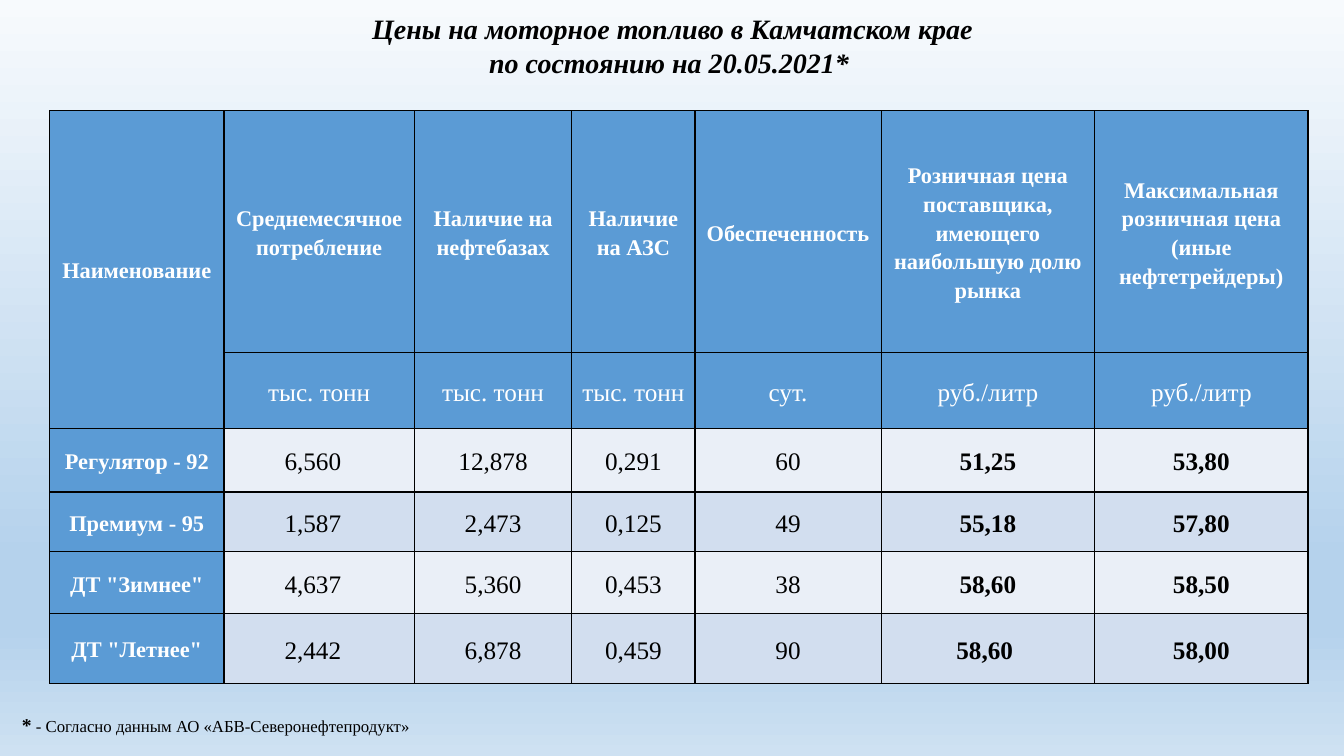
from dataclasses import dataclass

import lxml.etree
import pptx
import pptx.dml.color
import pptx.enum.text
import pptx.oxml.ns
import pptx.util

Pt = pptx.util.Pt
qn = pptx.oxml.ns.qn
ALIGN = pptx.enum.text.PP_ALIGN
ANCHOR = pptx.enum.text.MSO_ANCHOR

FONT = "Times New Roman"
COLORS = {
    "header": "5B9BD5",
    "light": "EAEFF7",
    "band": "D2DEEF",
    "white": "FFFFFF",
    "black": "000000",
}
SKY_STOPS = {0: "F7FAFD", 74: "B5D2EC", 83: "B5D2EC", 100: "CEE1F2"}


@dataclass(frozen=True)
class Run:
    text: str
    size: float
    color: str = "black"
    bold: bool = False
    italic: bool = False


@dataclass(frozen=True)
class Caption:
    left: float
    top: float
    width: float
    height: float
    align: ALIGN
    lines: tuple[tuple[Run, ...], ...]


@dataclass(frozen=True)
class Indicator:
    title: str
    unit: str
    width: float
    bold: bool = False
    right_indent: float = 0


@dataclass(frozen=True)
class Fuel:
    name: str
    height: float
    values: tuple[str, ...]


NAME_WIDTH = 124.5
TITLE_HEIGHT, UNIT_HEIGHT = 173, 54
TABLE_LEFT, TABLE_TOP = 35.5, 79
CELL_INSET = 5

INDICATORS = (
    Indicator("Среднемесячное потребление", "тыс. тонн", 136, right_indent=9),
    Indicator("Наличие на нефтебазах", "тыс. тонн", 112.5),
    Indicator("Наличие на АЗС", "тыс. тонн", 88),
    Indicator("Обеспеченность", "сут.", 133),
    Indicator("Розничная цена поставщика, имеющего наибольшую долю рынка",
              "руб./литр", 152.5, bold=True),
    Indicator("Максимальная розничная цена\n(иные нефтетрейдеры)",
              "руб./литр", 152.5, bold=True),
)
FUELS = (
    Fuel("Регулятор - 92", 45.5, ("6,560", "12,878", "0,291", "60", "51,25", "53,80")),
    Fuel("Премиум - 95", 42.5, ("1,587", "2,473", "0,125", "49", "55,18", "57,80")),
    Fuel('ДТ "Зимнее"', 44.5, ("4,637", "5,360", "0,453", "38", "58,60", "58,50")),
    Fuel('ДТ "Летнее"', 49.5, ("2,442", "6,878", "0,459", "90", "58,60 ", "58,00")),
)
CAPTIONS = (
    Caption(95, 5, 771, 55.5, ALIGN.CENTER, (
        (Run("Цены на моторное топливо в Камчатском крае", 20, bold=True, italic=True),),
        (Run("по состоянию на 20.05.2021* ", 20, bold=True, italic=True),),
    )),
    Caption(8.5, 506, 430.5, 24.5, ALIGN.LEFT, (
        (Run("*", 14, bold=True),
         Run(" - Согласно данным АО «АБВ-Северонефтепродукт»", 12)),
    )),
)


def apply_format(target: object, values: dict) -> None:
    for name, value in values.items():
        setattr(target, name, value)


def rgb(color: str) -> pptx.dml.color.RGBColor:
    return pptx.dml.color.RGBColor.from_string(COLORS[color])


def add_run(paragraph, run: Run) -> None:
    piece = paragraph.add_run()
    piece.text = run.text
    apply_format(piece.font, {
        "name": FONT, "size": Pt(run.size), "bold": run.bold, "italic": run.italic,
    })
    piece.font.color.rgb = rgb(run.color)


def write_lines(frame, lines, align: ALIGN, spacing: float) -> None:
    for index, line in enumerate(lines):
        paragraph = frame.add_paragraph() if index else frame.paragraphs[0]
        apply_format(paragraph, {"alignment": align, "line_spacing": spacing})
        for run in line:
            add_run(paragraph, run)


def paint_background(slide) -> None:
    fill = slide.background.fill
    fill.gradient()
    fill.gradient_angle = 270
    stops = next(slide.element.iter(qn("a:gsLst")))
    for stop in list(stops):
        stops.remove(stop)
    for percent, color in SKY_STOPS.items():
        stop = lxml.etree.SubElement(stops, qn("a:gs"), pos=str(percent * 1000))
        lxml.etree.SubElement(stop, qn("a:srgbClr"), val=color)


def style_cell(cell, fill: str, right_indent: float = 0) -> None:
    apply_format(cell, {
        "margin_left": Pt(CELL_INSET),
        "margin_right": Pt(CELL_INSET + right_indent),
        "margin_top": 0,
        "margin_bottom": 0,
        "vertical_anchor": ANCHOR.MIDDLE,
    })
    properties = cell._tc.get_or_add_tcPr()
    for side in ("a:lnL", "a:lnR", "a:lnT", "a:lnB"):
        border = lxml.etree.SubElement(properties, qn(side), w=str(Pt(1)))
        solid = lxml.etree.SubElement(border, qn("a:solidFill"))
        lxml.etree.SubElement(solid, qn("a:srgbClr"), val=COLORS["black"])
    cell.fill.solid()
    cell.fill.fore_color.rgb = rgb(fill)


def fill_cell(cell, text: str, fill: str, size: float, color: str,
              bold: bool, right_indent: float = 0) -> None:
    style_cell(cell, fill, right_indent)
    lines = [(Run(line, size, color, bold),) for line in text.split("\n")]
    write_lines(cell.text_frame, lines, ALIGN.CENTER, 1.15)


def add_price_table(slide) -> None:
    widths = [NAME_WIDTH, *(indicator.width for indicator in INDICATORS)]
    heights = [TITLE_HEIGHT, UNIT_HEIGHT, *(fuel.height for fuel in FUELS)]
    prices = slide.shapes.add_table(
        len(heights), len(widths), Pt(TABLE_LEFT), Pt(TABLE_TOP),
        Pt(sum(widths)), Pt(sum(heights))).table
    apply_format(prices, {"first_row": False, "horz_banding": False})
    for column, width in zip(prices.columns, widths):
        column.width = Pt(width)
    for row, height in zip(prices.rows, heights):
        row.height = Pt(height)

    fill_cell(prices.cell(0, 0), "Наименование", "header", 16, "white", True)
    style_cell(prices.cell(1, 0), "header")
    prices.cell(0, 0).merge(prices.cell(1, 0))
    for column, indicator in enumerate(INDICATORS, 1):
        fill_cell(prices.cell(0, column), indicator.title, "header", 16, "white", True)
        fill_cell(prices.cell(1, column), indicator.unit, "header", 18, "white", False)
    for row, fuel in enumerate(FUELS, 2):
        fill_cell(prices.cell(row, 0), fuel.name, "header", 16, "white", True)
        shade = "band" if row % 2 else "light"
        for column, (indicator, value) in enumerate(zip(INDICATORS, fuel.values), 1):
            fill_cell(prices.cell(row, column), value, shade, 18, "black",
                      indicator.bold, indicator.right_indent)


def add_caption(slide, caption: Caption) -> None:
    frame = slide.shapes.add_textbox(
        Pt(caption.left), Pt(caption.top), Pt(caption.width), Pt(caption.height)).text_frame
    apply_format(frame, {
        "word_wrap": True,
        "auto_size": pptx.enum.text.MSO_AUTO_SIZE.SHAPE_TO_FIT_TEXT,
    })
    write_lines(frame, caption.lines, caption.align, 1.0)


def main() -> None:
    deck = pptx.Presentation()
    apply_format(deck, {"slide_width": Pt(960), "slide_height": Pt(540)})
    slide = deck.slides.add_slide(deck.slide_layouts[6])
    paint_background(slide)
    add_price_table(slide)
    for caption in CAPTIONS:
        add_caption(slide, caption)
    deck.save("out.pptx")


if __name__ == "__main__":
    main()
